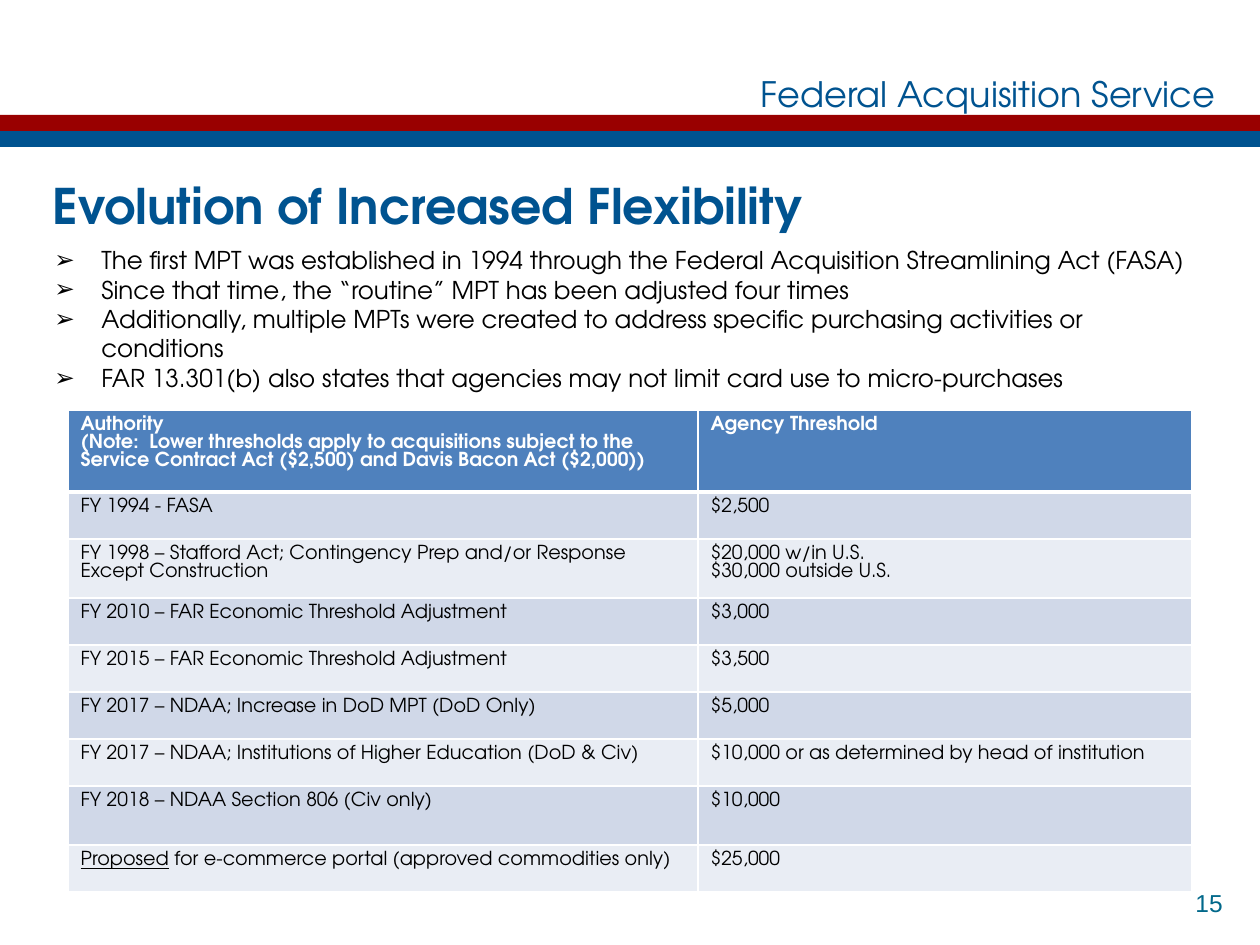
from lxml.etree import SubElement
from pptx import Presentation
from pptx.dml.color import RGBColor
from pptx.enum.shapes import MSO_SHAPE
from pptx.enum.text import MSO_ANCHOR, PP_ALIGN
from pptx.oxml.ns import qn
from pptx.util import Emu, Pt

PX = 914400 / 126
NAVY = RGBColor(0x00, 0x53, 0x90)
RED = RGBColor(0x99, 0x00, 0x00)
TEAL = RGBColor(0x01, 0x68, 0x8A)
BLACK = RGBColor(0x00, 0x00, 0x00)
WHITE = RGBColor(0xFF, 0xFF, 0xFF)
HEADER_BLUE = RGBColor(0x4F, 0x81, 0xBD)
BAND_DARK = RGBColor(0xD0, 0xD8, 0xE8)
BAND_LIGHT = RGBColor(0xE9, 0xED, 0xF4)

BULLETS = [
    "The first MPT was established in 1994 through the Federal Acquisition Streamlining Act (FASA)",
    "Since that time, the “routine” MPT has been adjusted four times",
    "Additionally, multiple MPTs were created to address specific purchasing activities or conditions",
    "FAR 13.301(b) also states that agencies may not limit card use to micro-purchases",
]

# Each row: height, then the paragraphs of its two cells
THRESHOLDS = [
    (81, ["Authority",
          "(Note:  Lower thresholds apply to acquisitions subject to the "
          "Service Contract Act ($2,500) and Davis Bacon Act ($2,000))"],
     ["Agency Threshold"]),
    (47, ["FY 1994 - FASA"], ["$2,500"]),
    (59, ["FY 1998 – Stafford Act; Contingency Prep and/or Response Except Construction"],
     ["$20,000 w/in U.S.", "$30,000 outside U.S."]),
    (47, ["FY 2010 – FAR Economic Threshold Adjustment"], ["$3,000"]),
    (47, ["FY 2015 – FAR Economic Threshold Adjustment"], ["$3,500"]),
    (47, ["FY 2017 – NDAA; Increase in DoD MPT (DoD Only)"], ["$5,000"]),
    (47, ["FY 2017 – NDAA; Institutions of Higher Education (DoD & Civ)"],
     ["$10,000 or as determined by head of institution"]),
    (59, ["FY 2018 – NDAA Section 806 (Civ only)"], ["$10,000"]),
    (47, [[("Proposed", True), (" for e-commerce portal (approved commodities only)", False)]],
     ["$25,000"]),
]


def px(length):
    return Emu(round(length * PX))


class SlideBuilder:
    font = "TeX Gyre Adventor"
    indent = 47

    def __init__(self, slide):
        self.slide = slide

    def fill_text(self, frame, paragraphs, size, color, bold=False, font=None,
                  align=PP_ALIGN.LEFT, bullet=None):
        """A paragraph is a string or a list of (text, underlined) runs."""
        for index, content in enumerate(paragraphs):
            paragraph = frame.paragraphs[0] if index == 0 else frame.add_paragraph()
            paragraph.alignment = align
            if bullet:
                self.add_bullet(paragraph, bullet)
            runs = [(content, False)] if isinstance(content, str) else content
            for text, underlined in runs:
                run = paragraph.add_run()
                run.text = text
                run.font.name = font or self.font
                run.font.size = Pt(size)
                run.font.bold = bold
                run.font.underline = underlined
                run.font.color.rgb = color

    def add_bullet(self, paragraph, character):
        properties = paragraph._p.get_or_add_pPr()
        properties.set("marL", str(px(self.indent)))
        properties.set("indent", str(-px(self.indent)))
        SubElement(properties, qn("a:buFont"), typeface="Arial")
        SubElement(properties, qn("a:buChar"), char=character)

    def text(self, left, top, width, height, paragraphs, size, color,
             anchor=MSO_ANCHOR.TOP, insets=None, **style):
        shape = self.slide.shapes.add_textbox(px(left), px(top), px(width), px(height))
        frame = shape.text_frame
        frame.word_wrap = True
        frame.vertical_anchor = anchor
        if insets:
            frame.margin_left = frame.margin_right = px(insets[0])
            frame.margin_top = frame.margin_bottom = px(insets[1])
        self.fill_text(frame, paragraphs, size, color, **style)

    def stripe(self, top, height, color):
        shape = self.slide.shapes.add_shape(
            MSO_SHAPE.RECTANGLE, 0, px(top), px(1260), px(height))
        shape.shadow.inherit = False
        shape.fill.solid()
        shape.fill.fore_color.rgb = color
        shape.line.fill.background()

    def border_cell(self, cell, widths):
        properties = cell._tc.get_or_add_tcPr()
        for position, (side, width) in enumerate(widths.items()):
            line = SubElement(properties, qn(f"a:{side}"), w=str(Pt(width)))
            fill = SubElement(line, qn("a:solidFill"))
            SubElement(fill, qn("a:srgbClr"), val=str(WHITE))
            properties.insert(position, line)

    def table(self, left, top, column_widths, rows, size):
        height = sum(row[0] for row in rows)
        table = self.slide.shapes.add_table(
            len(rows), len(column_widths), px(left), px(top),
            px(sum(column_widths)), px(height)).table
        for column, width in zip(table.columns, column_widths):
            column.width = px(width)
        for index, (row_height, *contents) in enumerate(rows):
            header = index == 0
            band = HEADER_BLUE if header else (BAND_LIGHT, BAND_DARK)[index % 2]
            table.rows[index].height = px(row_height)
            for cell, paragraphs in zip(table.rows[index].cells, contents):
                cell.fill.solid()
                cell.fill.fore_color.rgb = band
                self.border_cell(cell, {"lnL": 1, "lnR": 1,
                                        "lnT": 3 if index == 1 else 1,
                                        "lnB": 3 if header else 1})
                self.fill_text(cell.text_frame, paragraphs, size,
                               WHITE if header else BLACK, bold=header)


def main():
    presentation = Presentation()
    presentation.slide_width = px(1260)
    presentation.slide_height = px(945)
    builder = SlideBuilder(presentation.slides.add_slide(presentation.slide_layouts[6]))

    # Banner
    builder.text(692, 69, 536, 48, ["Federal Acquisition Service"], 20, NAVY,
                 anchor=MSO_ANCHOR.MIDDLE, align=PP_ALIGN.RIGHT)
    builder.stripe(115, 16, RED)
    builder.stripe(131, 16, NAVY)

    # Page number
    builder.text(1183, 882, 56, 43, ["15"], 14, TEAL, font="Arial")

    # Title and bullets
    builder.text(53, 168, 1120, 73, ["Evolution of Increased Flexibility"], 28, NAVY,
                 anchor=MSO_ANCHOR.MIDDLE, insets=(0, 8), bold=True)
    builder.text(42, 239, 1183, 161, BULLETS, 14, BLACK, bullet="➢")

    # Threshold table
    builder.table(68, 410, [630, 494], THRESHOLDS, 11)

    presentation.save("out.pptx")


if __name__ == "__main__":
    main()
